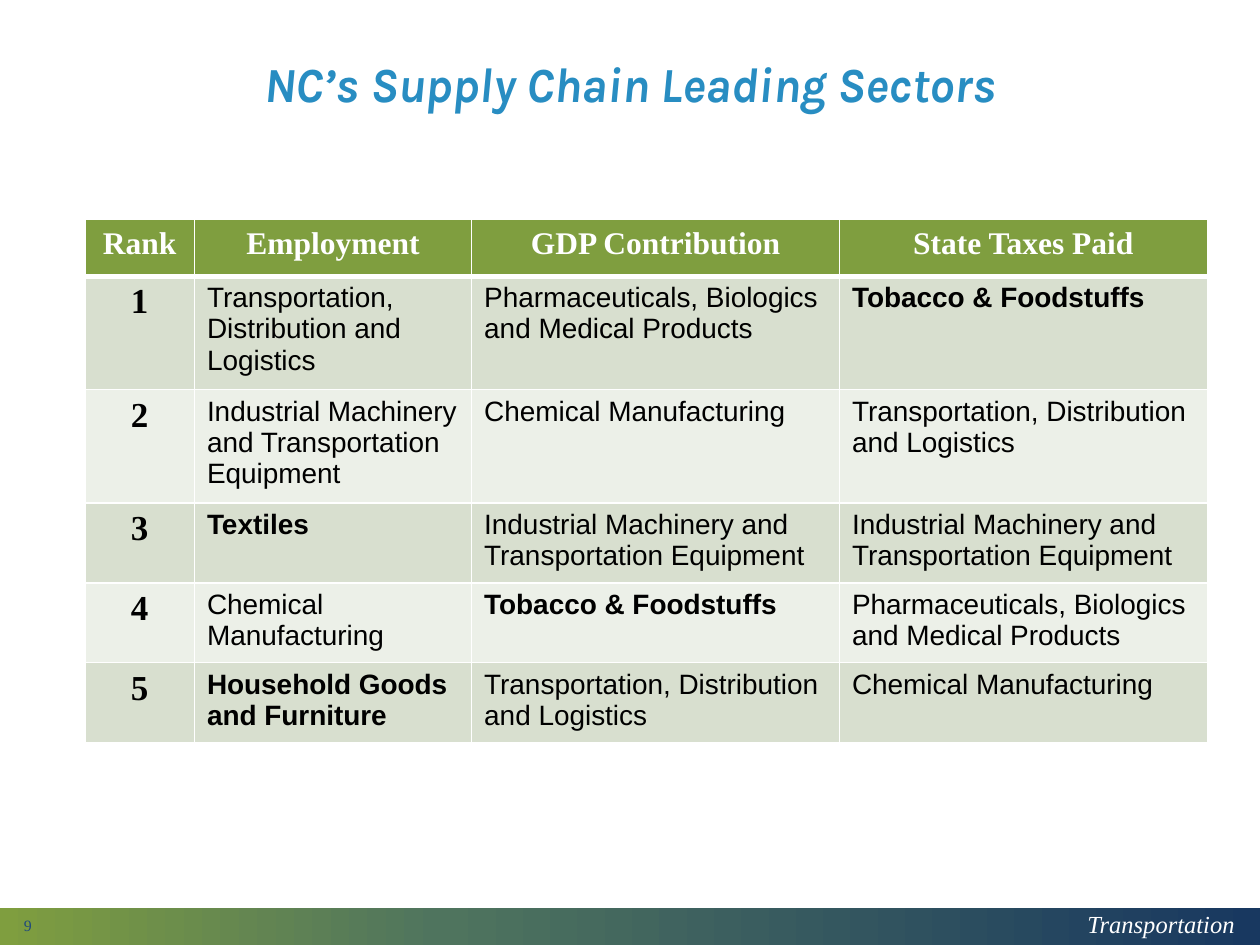
from copy import deepcopy
from dataclasses import dataclass

from lxml.etree import SubElement
from pptx import Presentation
from pptx.dml.color import RGBColor
from pptx.enum.shapes import MSO_SHAPE
from pptx.enum.text import MSO_ANCHOR, PP_ALIGN
from pptx.oxml.ns import qn
from pptx.util import Pt


@dataclass(frozen=True)
class Theme:
    serif: str = "Times New Roman"
    sans: str = "Arial"
    display: str = "Karla"
    white: str = "FFFFFF"
    black: str = "000000"
    green: str = "7F9E3F"
    teal: str = "4F745E"
    navy: str = "183860"
    title_blue: str = "288DC2"
    number_blue: str = "1F497D"
    bands: tuple = ("D8DFCF", "ECF0E8")
    title_size: int = 28
    rank_size: int = 20
    header_size: int = 18
    body_size: int = 16
    footer_size: int = 14
    number_size: int = 9


THEME = Theme()
HEADERS = ("Rank", "Employment", "GDP Contribution", "State Taxes Paid")
LOGISTICS = "Transportation, Distribution and Logistics"
MACHINERY = "Industrial Machinery and Transportation Equipment"
PHARMA = "Pharmaceuticals, Biologics and Medical Products"
CHEMICAL = "Chemical Manufacturing"
TOBACCO = "Tobacco & Foodstuffs"
TEXTILES = "Textiles"
HOUSEHOLD = "Household Goods and Furniture"
TRADITIONAL = {TOBACCO, TEXTILES, HOUSEHOLD}
SECTORS = (
    (LOGISTICS, PHARMA, TOBACCO),
    (MACHINERY, CHEMICAL, LOGISTICS),
    (TEXTILES, MACHINERY, MACHINERY),
    (CHEMICAL, TOBACCO, PHARMA),
    (HOUSEHOLD, LOGISTICS, CHEMICAL),
)
COLUMN_WIDTHS = (62.6, 158.4, 210.2, 210.2)
ROW_HEIGHTS = (32.4, 61.2, 61.2, 43.7, 43.7, 43.7)


def write(frame, text, font, size, color, bold=False, italic=False, align=PP_ALIGN.LEFT):
    frame.text = text
    para = frame.paragraphs[0]
    para.alignment = align
    for span in para.runs:
        span.font.name = font
        span.font.size = Pt(size)
        span.font.bold = bold
        span.font.italic = italic
        span.font.color.rgb = RGBColor.from_string(color)


def add_title(page, text):
    title = page.shapes.title
    title.left, title.top, title.width, title.height = Pt(49.7), Pt(7.9), Pt(620.6), Pt(83.5)
    write(title.text_frame, text, THEME.display, THEME.title_size, THEME.title_blue,
          bold=True, italic=True, align=PP_ALIGN.CENTER)
    title.text_frame.vertical_anchor = MSO_ANCHOR.MIDDLE
    title.text_frame.paragraphs[0].line_spacing = 0.9


def add_footer_band(page):
    band = page.shapes.add_shape(MSO_SHAPE.RECTANGLE, Pt(0), Pt(519), Pt(720), Pt(21))
    band.shadow.inherit = False
    band.line.fill.background()
    band.fill.gradient()
    band.fill.gradient_angle = 0
    stop_list = band.element.spPr.find(".//" + qn("a:gsLst"))
    stop_list.insert(1, deepcopy(stop_list[0]))
    stops = ((0, THEME.green), (0.35, THEME.teal), (1, THEME.navy))
    for stop, (position, color) in zip(band.fill.gradient_stops, stops):
        stop.position = position
        stop.color.rgb = RGBColor.from_string(color)


def add_label(page, left, top, width, height, text, size, color, **style):
    box = page.shapes.add_textbox(Pt(left), Pt(top), Pt(width), Pt(height))
    box.text_frame.word_wrap = True
    write(box.text_frame, text, THEME.serif, size, color, **style)
    return box


def set_borders(cell, top, bottom):
    properties = cell._tc.get_or_add_tcPr()
    for side, width in (("L", 1), ("R", 1), ("T", top), ("B", bottom)):
        line = SubElement(properties, qn(f"a:ln{side}"), w=str(Pt(width)))
        SubElement(SubElement(line, qn("a:solidFill")), qn("a:srgbClr"), val=THEME.white)


def format_cell(cell, text, row, column):
    set_borders(cell, top=3 if row == 1 else 1, bottom=3 if row == 0 else 1)
    cell.fill.solid()
    color = THEME.green if row == 0 else THEME.bands[(row - 1) % 2]
    cell.fill.fore_color.rgb = RGBColor.from_string(color)
    if row == 0:
        write(cell.text_frame, text, THEME.serif, THEME.header_size, THEME.white,
              bold=True, align=PP_ALIGN.CENTER)
    elif column == 0:
        write(cell.text_frame, text, THEME.serif, THEME.rank_size, THEME.black,
              bold=True, align=PP_ALIGN.CENTER)
    else:
        write(cell.text_frame, text, THEME.sans, THEME.body_size, THEME.black,
              bold=text in TRADITIONAL)


def add_sector_table(page):
    rows = [HEADERS] + [(str(rank), *names) for rank, names in enumerate(SECTORS, 1)]
    table = page.shapes.add_table(len(rows), len(HEADERS), Pt(48.5), Pt(125.5),
                                  Pt(sum(COLUMN_WIDTHS)), Pt(sum(ROW_HEIGHTS))).table
    table.horz_banding = False
    for column, width in zip(table.columns, COLUMN_WIDTHS):
        column.width = Pt(width)
    for row, height in zip(table.rows, ROW_HEIGHTS):
        row.height = Pt(height)
    for row, texts in enumerate(rows):
        for column, text in enumerate(texts):
            format_cell(table.cell(row, column), text, row, column)


def main():
    deck = Presentation()
    deck.slide_width, deck.slide_height = Pt(720), Pt(540)
    page = deck.slides.add_slide(deck.slide_layouts[5])
    add_footer_band(page)
    add_label(page, 612.7, 516.2, 101.5, 24.5, "Transportation", THEME.footer_size,
              THEME.white, italic=True, align=PP_ALIGN.CENTER)
    add_title(page, "NC’s Supply Chain Leading Sectors")
    add_sector_table(page)
    number = add_label(page, 6.5, 523.4, 162, 10.8, "9", THEME.number_size, THEME.number_blue)
    number.text_frame.vertical_anchor = MSO_ANCHOR.MIDDLE
    deck.save("out.pptx")


if __name__ == "__main__":
    main()
